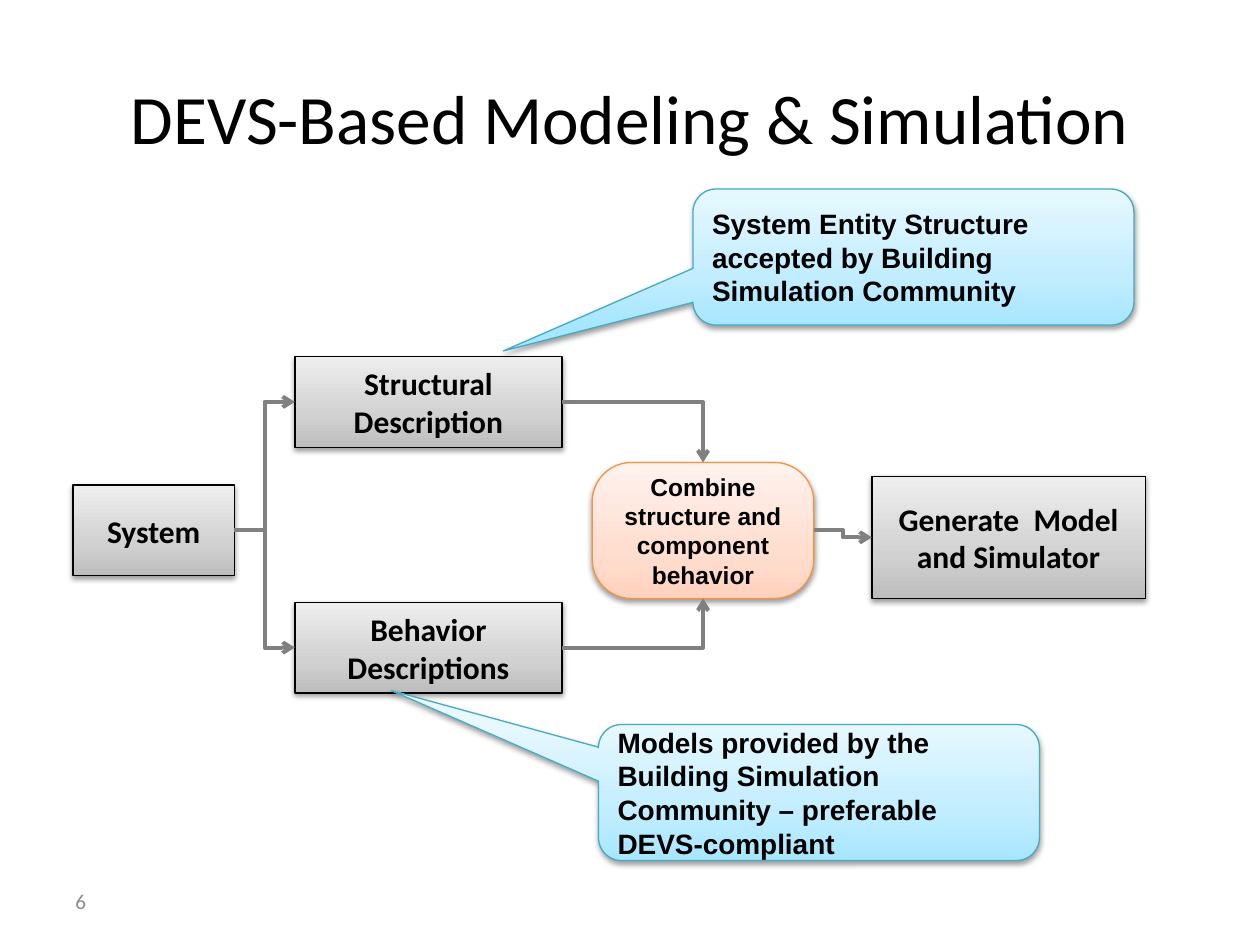
import copy
import pptx
import pptx.dml.color
import pptx.enum.shapes
import pptx.enum.text
import pptx.oxml
import pptx.oxml.ns
import pptx.util

KIND = pptx.enum.shapes.MSO_SHAPE
ALIGN = pptx.enum.text.PP_ALIGN
MIDDLE = pptx.enum.text.MSO_ANCHOR.MIDDLE
TOP, LEFT, BOTTOM, RIGHT = range(4)
COLS, ROWS = 100, 75

INK = {"text": "000000", "page": "8C8C8C", "arrow": "808080"}
FILLS = {
    "gray": ("BDBDBD", "D1D1D1", "EEEEEE"),
    "peach": ("FFD2BD", "FFDED0", "FFF2ED"),
    "blue": ("A7E6FF", "C1EDFF", "E7F8FF"),
}
EDGES = {"gray": "000000", "peach": "F69240", "blue": "46AAC5"}
FONTS = {
    "title": {"name": "Calibri", "size": pptx.util.Pt(39.6)},
    "page": {"name": "Calibri", "size": pptx.util.Pt(12)},
    "box": {"name": "Calibri", "size": pptx.util.Pt(18), "bold": True},
    "core": {"name": "Arial", "size": pptx.util.Pt(14), "bold": True},
    "note": {"name": "Arial", "size": pptx.util.Pt(16), "bold": True},
}
TIGHT = {"margin_left": 0, "margin_right": 0, "margin_top": 0, "margin_bottom": 0}
SHADOW = (
    f'<a:outerShdw {pptx.oxml.ns.nsdecls("a")} blurRad="40000" dist="20000" '
    'dir="5400000" rotWithShape="0"><a:srgbClr val="000000">'
    '<a:alpha val="38000"/></a:srgbClr></a:outerShdw>'
)


def paint(code):
    return pptx.dml.color.RGBColor.from_string(code)


def assign(thing, values):
    for key, value in values.items():
        setattr(thing, key, value)


class Board:
    """Hold the style and the current slide, and draw each kind of element."""

    def __init__(self, deck):
        self.wide, self.high = deck.slide_width, deck.slide_height
        self.slide = deck.slides.add_slide(deck.slide_layouts[6])
        self.shapes = self.slide.shapes

    def place(self, col, row, cols, rows):
        x, y = self.wide / COLS, self.high / ROWS
        return [round(n) for n in (col * x, row * y, cols * x, rows * y)]

    def letter(self, shape, words, font, align, ink="text", frame=None):
        area = shape.text_frame
        assign(area, {"word_wrap": True, "vertical_anchor": MIDDLE, **(frame or {})})
        line = area.paragraphs[0]
        line.alignment = align
        run = line.add_run()
        run.text = words
        assign(run.font, FONTS[font])
        run.font.color.rgb = paint(INK[ink])

    def label(self, spot, words, font, align, ink="text"):
        self.letter(self.shapes.add_textbox(*self.place(*spot)), words, font, align, ink)

    def block(self, kind, spot, hue, adjust=()):
        shape = self.shapes.add_shape(kind, *self.place(*spot))
        for index, value in enumerate(adjust):
            shape.adjustments[index] = value
        shape.fill.gradient()
        shape.fill.gradient_angle = 90
        props = shape._element.spPr
        stops = props.find(".//" + pptx.oxml.ns.qn("a:gsLst"))
        stops.insert(1, copy.deepcopy(stops[0]))
        for stop, share, code in zip(shape.fill.gradient_stops, (0, 0.35, 1), FILLS[hue]):
            stop.position = share
            stop.color.rgb = paint(code)
        shape.line.color.rgb = paint(EDGES[hue])
        shape.line.width = pptx.util.Pt(0.75)
        shape.shadow.inherit = False
        glow = props.find(pptx.oxml.ns.qn("a:effectLst"))
        glow.append(pptx.oxml.parse_xml(SHADOW))
        return shape

    def box(self, spot, words):
        shape = self.block(KIND.RECTANGLE, spot, "gray")
        self.letter(shape, words, "box", ALIGN.CENTER, frame=TIGHT)
        return shape

    def core(self, spot, words):
        shape = self.block(KIND.ROUNDED_RECTANGLE, spot, "peach", [0.29])
        self.letter(shape, words, "core", ALIGN.CENTER, frame=TIGHT)
        return shape

    def note(self, col, row, words, tip):
        shape = self.block(KIND.ROUNDED_RECTANGULAR_CALLOUT, (col, row, 35, 10.8),
                           "blue", (*tip, 0.17))
        self.letter(shape, words, "note", ALIGN.LEFT)

    def link(self, start, end, side):
        wire = self.shapes.add_connector(pptx.enum.shapes.MSO_CONNECTOR.ELBOW, 0, 0, 0, 0)
        wire.begin_connect(start, RIGHT)
        wire.end_connect(end, side)
        wire.line.color.rgb = paint(INK["arrow"])
        wire.line.width = pptx.util.Pt(2.25)
        props = wire._element.spPr
        if side != LEFT:
            props.find(pptx.oxml.ns.qn("a:prstGeom")).set("prst", "bentConnector2")
        space = pptx.oxml.ns.nsdecls("a")
        props.find(pptx.oxml.ns.qn("a:ln")).append(
            pptx.oxml.parse_xml(f'<a:tailEnd {space} type="arrow"/>'))
        props.append(pptx.oxml.parse_xml(f"<a:effectLst {space}/>"))


def main():
    deck = pptx.Presentation()
    deck.slide_width = pptx.util.Inches(10)
    deck.slide_height = pptx.util.Inches(7.5)
    board = Board(deck)
    board.label((5, 3, 90, 12.5), "DEVS-Based Modeling & Simulation", "title", ALIGN.CENTER)
    board.label((5, 69.5, 23.3, 4), "6", "page", ALIGN.LEFT, "page")

    system = board.box((5.8, 38.5, 12.8, 7.2), "System")
    parts = [board.box((23.4, row, 21.2, 7.2), words) for row, words in (
        (28.3, "Structural Description"), (47.8, "Behavior Descriptions"))]
    model = board.box((69.2, 37.8, 21.7, 9.7), "Generate  Model and Simulator")
    core = board.core((47, 36.7, 17.6, 10.8), "Combine structure and component behavior")

    for part, side in zip(parts, (TOP, BOTTOM)):
        board.link(system, part, LEFT)
        board.link(part, core, side)
    board.link(core, model, LEFT)

    board.note(47.5, 57.5, "Models provided by the Building Simulation Community "
               "– preferable DEVS-compliant", (-0.97, -0.75))
    board.note(55, 15, "System Entity Structure accepted by Building "
               "Simulation Community", (-0.93, 0.69))
    deck.save("out.pptx")


if __name__ == "__main__":
    main()
